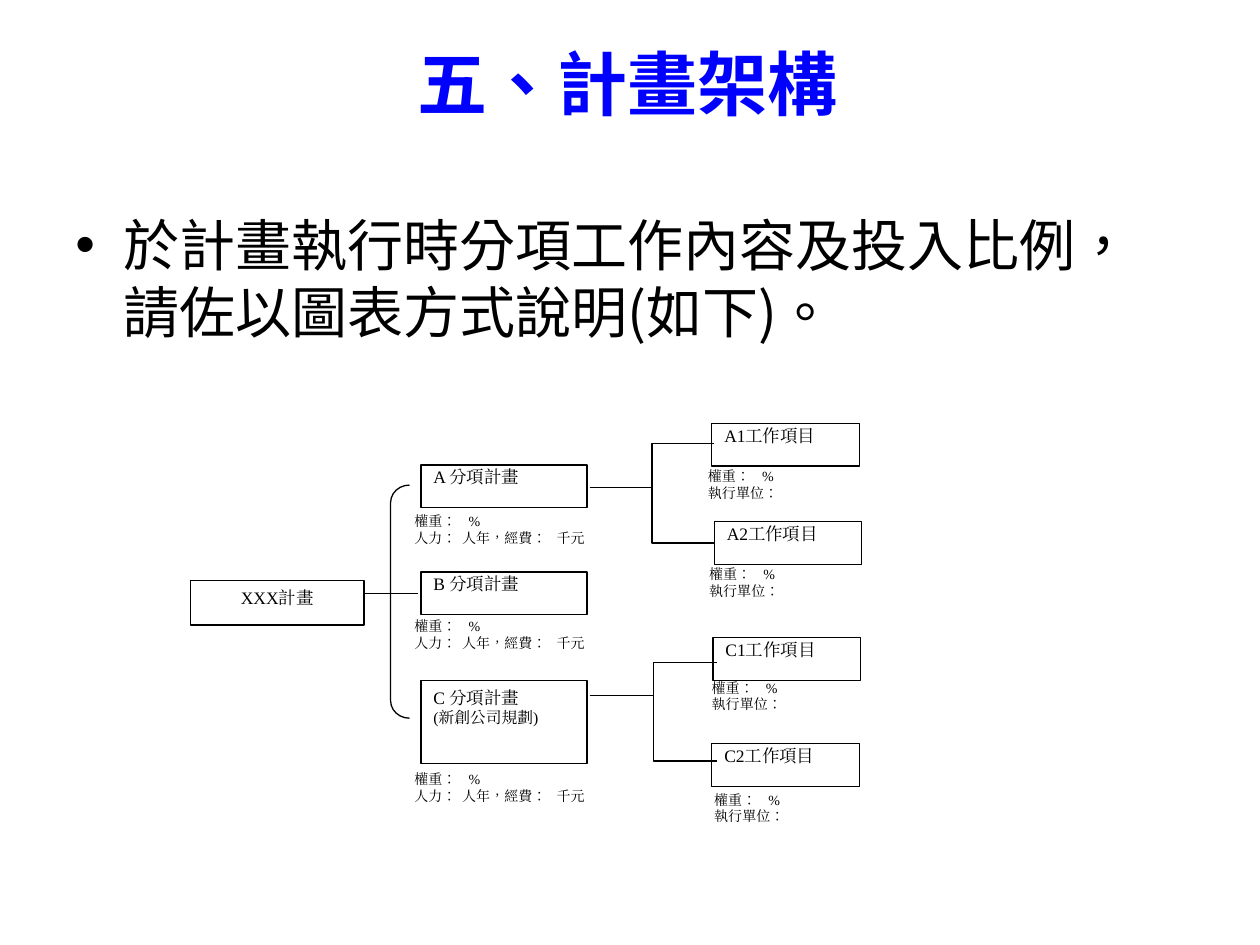
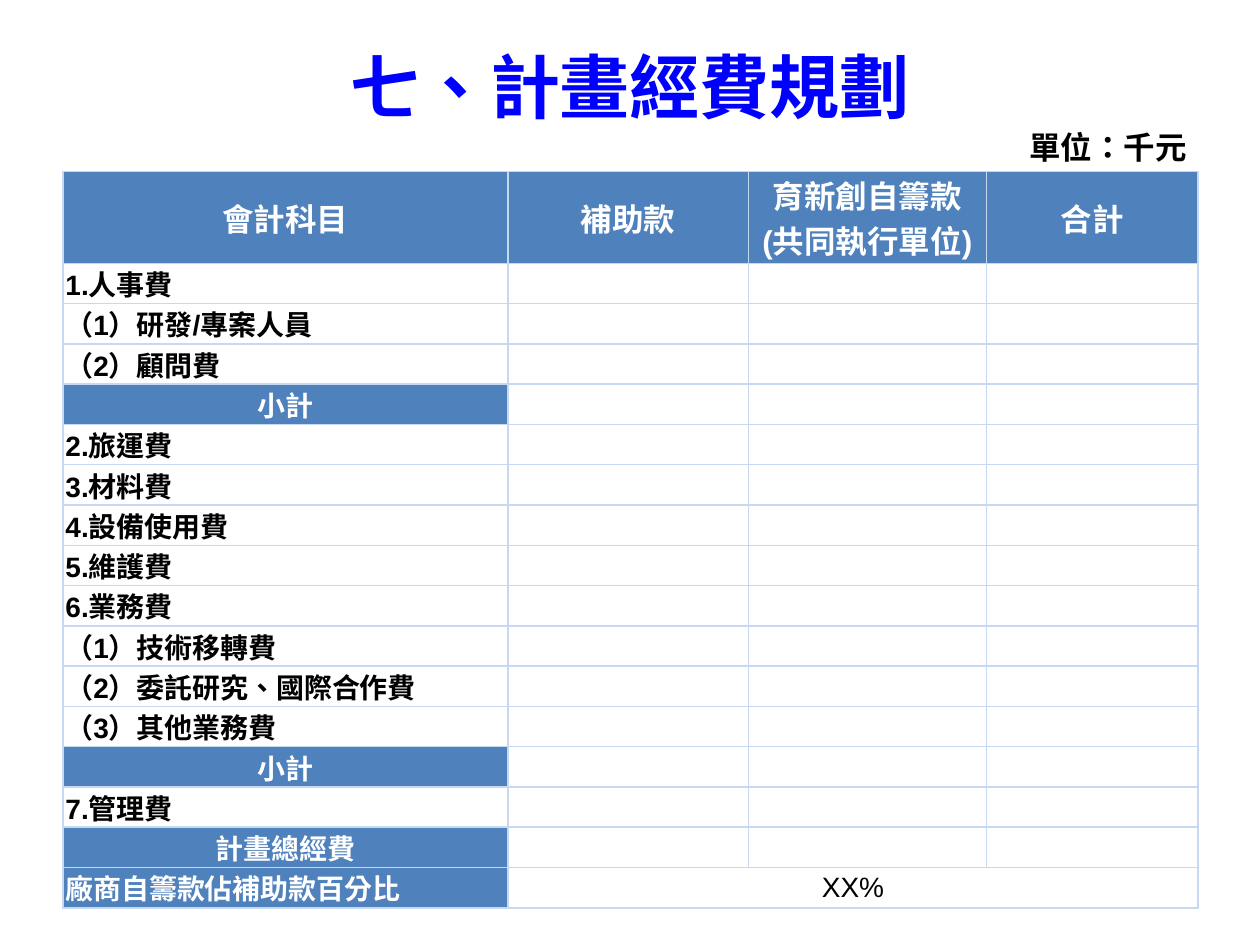
from dataclasses import dataclass

from lxml.etree import SubElement
from pptx import Presentation
from pptx.dml.color import RGBColor
from pptx.enum.shapes import MSO_CONNECTOR as Connector, MSO_SHAPE as Preset
from pptx.enum.text import MSO_ANCHOR as Anchor, PP_ALIGN as Align
from pptx.oxml import parse_xml
from pptx.oxml.ns import nsdecls, qn
from pptx.util import Inches, Pt

UNIT = 0.1  # side of one grid square; the slide is 100 columns by 75 rows
COLUMNS, ROWS = 100, 75


@dataclass(frozen=True)
class Theme:
    title: str = "0000FF"
    ink: str = "000000"
    paper: str = "FFFFFF"
    band: str = "4F81BD"
    border: str = "C6D9F1"
    sans: str = "Noto Sans CJK SC"
    latin: str = "Arial"
    serif: str = "Times New Roman"
    title_size: int = 40
    body_size: int = 32
    table_head_size: int = 18
    table_size: int = 16
    box_size: int = 10
    box_note_size: int = 9
    caption_size: int = 8
    line_width: float = 0.75


THEME = Theme()
TIGHT = (1, 0.1, 1, 0.1)
NORMAL = (1, 0.5, 1, 0.5)
CELL = (0.2, 0, 0.2, 0)


@dataclass(frozen=True)
class Box:
    """A rectangle in grid units."""
    left: float
    top: float
    width: float
    height: float

    def inner(self, left, top, width, height):
        return Box(self.left + left, self.top + top, width, height)

    def lengths(self):
        return [grid(v) for v in (self.left, self.top, self.width, self.height)]


def grid(units):
    return Inches(round(units * UNIT, 3))


def apply(target, values):
    for name, value in values.items():
        setattr(target, name, value)


def margins(insets):
    sides = ("margin_left", "margin_top", "margin_right", "margin_bottom")
    return dict(zip(sides, map(grid, insets)))


# ---- Text -------------------------------------------------------------

def add_run(paragraph, text, size, color=THEME.ink, bold=False,
            latin=THEME.sans, asian=THEME.sans):
    run = paragraph.add_run()
    run.text = text
    apply(run.font, {"size": Pt(size), "bold": bold, "name": latin})
    run.font.color.rgb = RGBColor.from_string(color)
    properties = run.font._element
    properties.set("lang", "zh-TW")
    SubElement(properties, qn("a:ea")).set("typeface", asian)


def fill_frame(frame, lines, align=Align.LEFT, anchor=Anchor.TOP,
               insets=NORMAL, **style):
    """Write (text, size) lines into a text frame."""
    apply(frame, {"word_wrap": True, "vertical_anchor": anchor, **margins(insets)})
    for index, (text, size) in enumerate(lines):
        paragraph = frame.add_paragraph() if index else frame.paragraphs[0]
        paragraph.alignment = align
        add_run(paragraph, text, size, **style)


def add_text(slide, box, lines, **style):
    frame = slide.shapes.add_textbox(*box.lengths()).text_frame
    fill_frame(frame, lines, **style)
    return frame


def add_title(slide, box, text, latin=THEME.sans):
    add_text(slide, box, [(text, THEME.title_size)], align=Align.CENTER,
             anchor=Anchor.MIDDLE, color=THEME.title, bold=True, latin=latin)


def set_tabs(paragraph, stops):
    tab_list = SubElement(paragraph._p.get_or_add_pPr(), qn("a:tabLst"))
    for stop in stops:
        tab = SubElement(tab_list, qn("a:tab"))
        tab.set("pos", str(grid(stop)))
        tab.set("algn", "l")


def add_bullet(slide, box, text):
    frame = add_text(slide, box, [(text, THEME.body_size)])
    paragraph = frame.paragraphs[0]
    paragraph.space_before = Pt(4)
    properties = paragraph._p.get_or_add_pPr()
    properties.set("marL", str(grid(3.8)))
    properties.set("indent", str(-grid(3.8)))
    SubElement(properties, qn("a:buFont")).set("typeface", THEME.latin)
    SubElement(properties, qn("a:buChar")).set("char", "•")


# ---- Structure diagram ------------------------------------------------

def style_line(line):
    line.width = Pt(THEME.line_width)
    line.color.rgb = RGBColor.from_string(THEME.ink)


def add_node(slide, box, lines, **style):
    shape = slide.shapes.add_shape(Preset.RECTANGLE, *box.lengths())
    shape.shadow.inherit = False
    shape.fill.solid()
    shape.fill.fore_color.rgb = RGBColor.from_string(THEME.paper)
    style_line(shape.line)
    fill_frame(shape.text_frame, lines, latin=THEME.serif,
               asian=THEME.serif, **style)


def add_caption(slide, box, lines, insets=NORMAL):
    """Write (text, tab stops) lines below a node."""
    frame = add_text(slide, box, [(text, THEME.caption_size) for text, _ in lines],
                     insets=insets, latin=THEME.serif, asian=THEME.serif)
    for paragraph, (_, stops) in zip(frame.paragraphs, lines):
        if stops:
            set_tabs(paragraph, stops)


def add_line(slide, area, start, end, kind=Connector.STRAIGHT):
    points = [grid(v) for x, y in (start, end)
              for v in (area.left + x, area.top + y)]
    connector = slide.shapes.add_connector(kind, *points)
    style_line(connector.line)
    SubElement(connector._element.spPr, qn("a:effectLst"))


def add_bracket(slide, box):
    bracket = slide.shapes.add_shape(Preset.LEFT_BRACKET, *box.lengths())
    bracket.shadow.inherit = False
    bracket.adjustments[0] = 0.92
    bracket.fill.background()
    style_line(bracket.line)


WEIGHT = ("權重：\t%", [4.3])
EFFORT = ("人力：\t人年，經費：\t千元", [3.8, 11.3])
UNIT_IN_CHARGE = ("執行單位：", [])

# name, note, top, height, insets, caption top
BRANCHES = [
    ("A 分項計畫", None, 3.3, 3.4, TIGHT, 6.6),
    ("B 分項計畫", None, 11.8, 3.4, TIGHT, 14.9),
    ("C 分項計畫", "(新創公司規劃)", 20.4, 6.6, NORMAL, 27.1),
]
# name, left, top, caption left, caption top, caption insets
WORK_ITEMS = [
    ("A1工作項目", 41.4, 0, 40.1, 3, NORMAL),
    ("A2工作項目", 41.6, 7.8, 40.2, 11.2, TIGHT),
    ("C1工作項目", 41.5, 17, 40.4, 19.8, NORMAL),
    ("C2工作項目", 41.4, 25.4, 40.6, 29.1, TIGHT),
]
# branch height, end column, heights of the two work items
FORKS = [(5.1, 41.6, (1.6, 9.5)), (21.6, 41.8, (19, 26.8))]


def add_structure(slide, area):
    # Whole project
    add_node(slide, area.inner(0, 12.5, 13.8, 3.5),
             [("XXX計畫", THEME.box_size)], align=Align.CENTER)
    # Sub-projects
    for name, note, top, height, insets, caption_top in BRANCHES:
        lines = [(name, THEME.box_size)]
        if note:
            lines.append((note, THEME.box_note_size))
        add_node(slide, area.inner(18.3, top, 13.2, height), lines, insets=insets)
        add_caption(slide, area.inner(16.8, caption_top, 20.5, 6.7), [WEIGHT, EFFORT])
    add_line(slide, area, (13.7, 13.5), (18.1, 13.5))
    add_bracket(slide, area.inner(15.9, 4.9, 1.5, 18.5))
    # Work items
    for name, left, top, caption_left, caption_top, insets in WORK_ITEMS:
        add_node(slide, area.inner(left, top, 11.7, 3.4),
                 [(name, THEME.box_size)], insets=TIGHT)
        add_caption(slide, area.inner(caption_left, caption_top, 20.5, 6.7),
                    [WEIGHT, UNIT_IN_CHARGE], insets)
    # Forks
    for height, end, item_heights in FORKS:
        for item_height in item_heights:
            add_line(slide, area, (31.7, height), (end, item_height), Connector.ELBOW)


# ---- Budget table -----------------------------------------------------

HEADERS = [["會計科目"], ["補助款"], ["育新創自籌款", "(共同執行單位)"], ["合計"]]
SUBTOTAL, TOTAL, SHARE = "小計", "計畫總經費", "廠商自籌款佔補助款百分比"
ACCOUNTS = [
    "1.人事費", "（1）研發/專案人員", "（2）顧問費", SUBTOTAL,
    "2.旅運費", "3.材料費", "4.設備使用費", "5.維護費",
    "6.業務費", "（1）技術移轉費", "（2）委託研究、國際合作費",
    "（3）其他業務費", SUBTOTAL, "7.管理費", TOTAL, SHARE,
]
COLUMN_WIDTHS = (35.3, 19.1, 18.9, 16.8)
HEAD_HEIGHT, ROW_HEIGHT = 7.3, 3.2


def style_cell(cell, banded):
    apply(cell, {"vertical_anchor": Anchor.MIDDLE, **margins(CELL)})
    if banded:
        cell.fill.solid()
        cell.fill.fore_color.rgb = RGBColor.from_string(THEME.band)
    else:
        cell.fill.background()
    properties = cell._tc.get_or_add_tcPr()
    for index, side in enumerate("LRTB"):
        properties.insert(index, parse_xml(
            f'<a:ln{side} {nsdecls("a")} w="{Pt(1)}"><a:solidFill>'
            f'<a:srgbClr val="{THEME.border}"/></a:solidFill></a:ln{side}>'))


def fill_cell(cell, lines, size=THEME.table_size, align=Align.LEFT,
              banded=False, bold=True):
    style_cell(cell, banded)
    color = THEME.paper if banded else THEME.ink
    frame = cell.text_frame
    for index, text in enumerate(lines):
        paragraph = frame.add_paragraph() if index else frame.paragraphs[0]
        paragraph.alignment = align
        add_run(paragraph, text, size, color, bold, THEME.latin)
    if not lines:
        end = SubElement(frame.paragraphs[0]._p, qn("a:endParaRPr"))
        end.set("sz", str(size * 100))


def add_budget(slide, box):
    frame = slide.shapes.add_table(len(ACCOUNTS) + 1, len(HEADERS), *box.lengths())
    table = frame.table
    apply(table, {"first_row": False, "horz_banding": False})
    for column, width in zip(table.columns, COLUMN_WIDTHS):
        column.width = grid(width)
    for index, row in enumerate(table.rows):
        row.height = grid(ROW_HEIGHT if index else HEAD_HEIGHT)
    # Header row
    for column, lines in enumerate(HEADERS):
        fill_cell(table.cell(0, column), lines, THEME.table_head_size,
                  Align.CENTER, banded=True)
    # Account rows
    for row, account in enumerate(ACCOUNTS, 1):
        centred = account in (SUBTOTAL, TOTAL)
        fill_cell(table.cell(row, 0), [account], banded=centred or account == SHARE,
                  align=Align.CENTER if centred else Align.LEFT)
        for column in range(1, len(HEADERS)):
            is_share = account == SHARE and column == 1
            fill_cell(table.cell(row, column), ["XX%"] if is_share else [],
                      align=Align.CENTER, bold=False)
    last = len(ACCOUNTS)
    table.cell(last, 1).merge(table.cell(last, len(HEADERS) - 1))


# ---- Slides -----------------------------------------------------------

def build_structure_slide(slide):
    add_bullet(slide, Box(5, 16.2, 90, 49.5),
               "於計畫執行時分項工作內容及投入比例，請佐以圖表方式說明(如下)。")
    add_title(slide, Box(4.8, 0.3, 90, 12.5), "五、計畫架構")
    add_structure(slide, Box(15.1, 33.6, 61, 36))


def build_budget_slide(slide):
    add_title(slide, Box(5, 0.5, 90, 12.5), "七、計畫經費規劃", THEME.latin)
    add_budget(slide, Box(5, 13.6, 90, HEAD_HEIGHT + ROW_HEIGHT * len(ACCOUNTS)))
    add_text(slide, Box(80.7, 9.7, 15.6, 4),
             [("單位：千元", THEME.table_head_size)], bold=True)


def main():
    presentation = Presentation()
    apply(presentation, {"slide_width": grid(COLUMNS), "slide_height": grid(ROWS)})
    blank = presentation.slide_layouts[6]
    for build in (build_structure_slide, build_budget_slide):
        build(presentation.slides.add_slide(blank))
    presentation.save("out.pptx")


if __name__ == "__main__":
    main()
